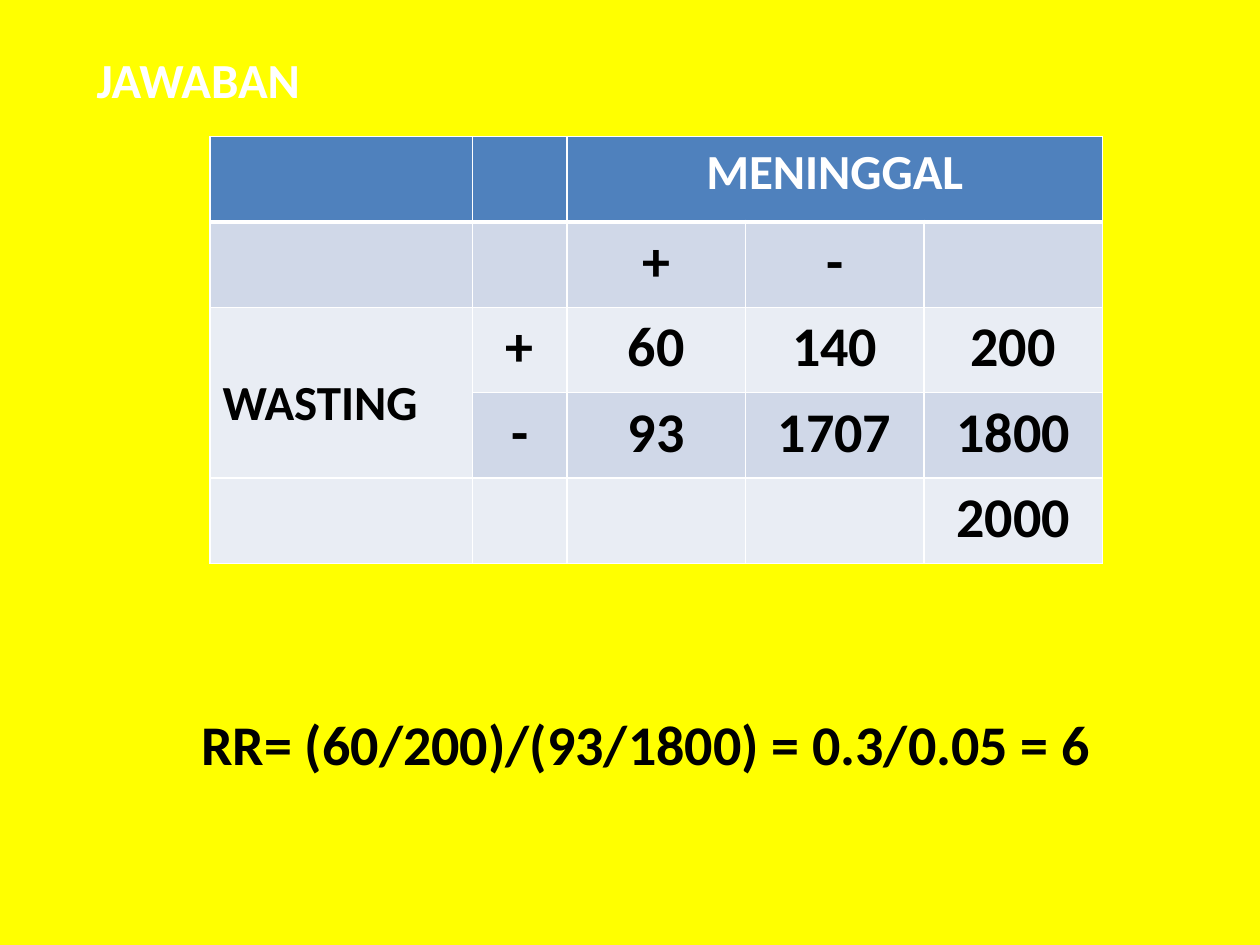
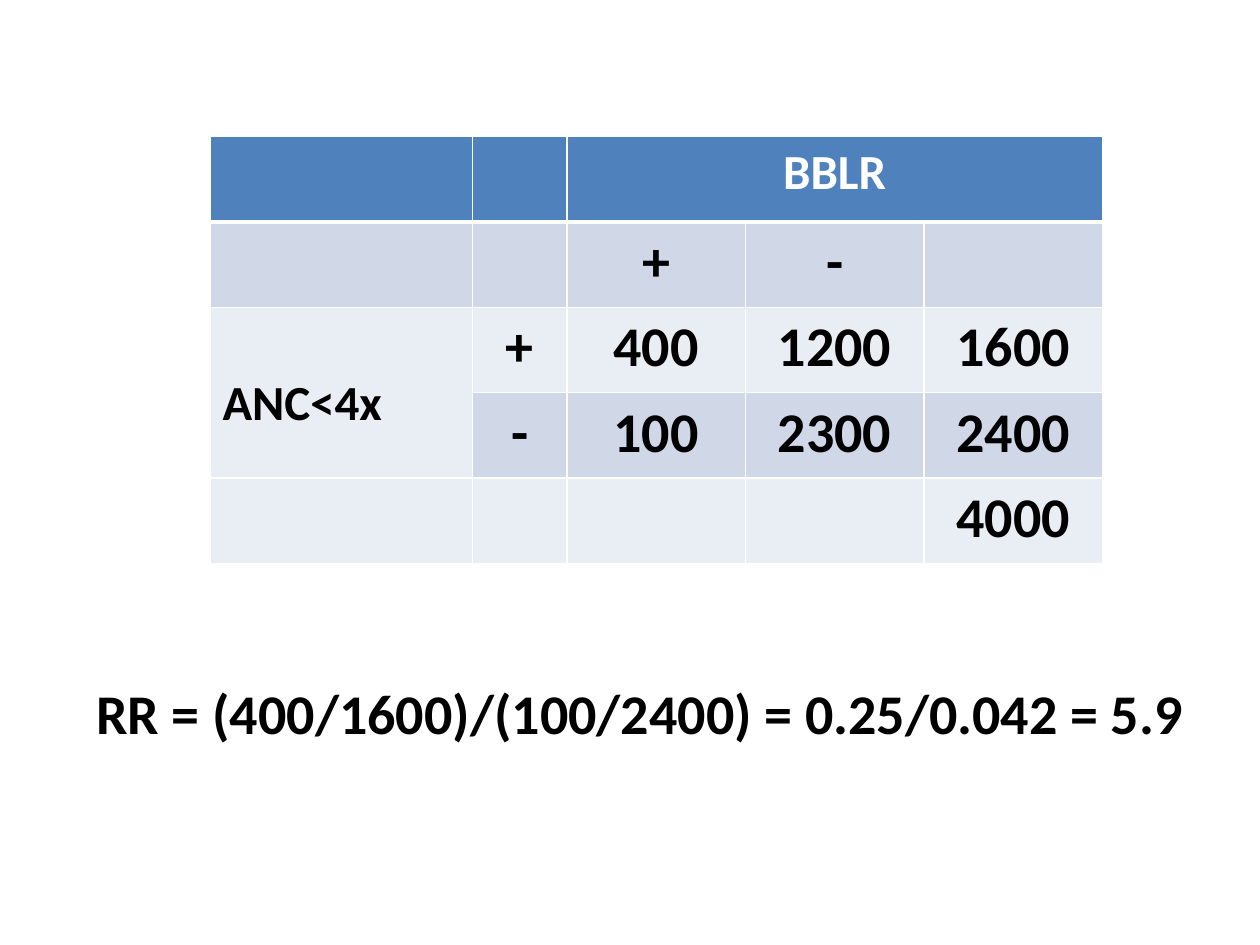
from lxml.etree import SubElement
from pptx import Presentation
from pptx.dml.color import RGBColor
from pptx.enum.text import MSO_ANCHOR, MSO_AUTO_SIZE, PP_ALIGN
from pptx.oxml.ns import qn
from pptx.util import Pt

# Shared look
FONT = "Calibri"
WHITE, BLACK, YELLOW = "FFFFFF", "000000", "FFFF00"
HEADER_FILL, BAND_FILLS = "4F81BD", ("E9EDF4", "D0D8E8")
LABEL_SIZE, VALUE_SIZE = 28, 32
TITLE_ONLY, BLANK = 5, 6

# Shared table grid
TABLE_BOX = (120, 78, 510, 244)
COLUMN_WIDTHS = (150, 54, 102, 102, 102)
ROW_COUNT = 5


def color(hex_value):
    return RGBColor.from_string(hex_value)


def write(text_frame, text, size, text_color=BLACK, alignment=PP_ALIGN.LEFT):
    paragraph = text_frame.paragraphs[0]
    paragraph.alignment = alignment
    run = paragraph.add_run()
    run.text = text
    font_format = {"name": FONT, "size": Pt(size), "bold": True}
    for attribute, value in font_format.items():
        setattr(run.font, attribute, value)
    run.font.color.rgb = color(text_color)


def format_frame(text_frame):
    frame_format = {
        "word_wrap": True,
        "auto_size": MSO_AUTO_SIZE.SHAPE_TO_FIT_TEXT,
        "vertical_anchor": MSO_ANCHOR.TOP,
    }
    for attribute, value in frame_format.items():
        setattr(text_frame, attribute, value)


def add_slide(presentation, layout_index, background):
    slide = presentation.slides.add_slide(presentation.slide_layouts[layout_index])
    slide.background.fill.solid()
    slide.background.fill.fore_color.rgb = color(background)
    return slide


def add_title(slide, text, box):
    title = slide.shapes.title
    for attribute, length in zip(("left", "top", "width", "height"), box):
        setattr(title, attribute, Pt(length))
    format_frame(title.text_frame)
    write(title.text_frame, text, LABEL_SIZE, WHITE)


def add_risk_ratio(slide, text, box):
    shape = slide.shapes.add_textbox(*map(Pt, box))
    format_frame(shape.text_frame)
    write(shape.text_frame, text, VALUE_SIZE)


def add_borders(cell, widths):
    properties = cell._tc.get_or_add_tcPr()
    for side, width in zip("LRTB", widths):
        line = SubElement(properties, qn(f"a:ln{side}"), w=str(Pt(width)))
        fill = SubElement(line, qn("a:solidFill"))
        SubElement(fill, qn("a:srgbClr"), val=WHITE)


def add_risk_table(slide, outcome, exposure, exposed, unexposed, total, box):
    """Two-by-two table; exposed and unexposed hold cases, non-cases and sum."""
    table = slide.shapes.add_table(
        ROW_COUNT, len(COLUMN_WIDTHS), *map(Pt, box)).table
    for column, width in zip(table.columns, COLUMN_WIDTHS):
        column.width = Pt(width)
    for row in table.rows:
        row.height = Pt(box[3] / ROW_COUNT)

    # Fills and borders
    for row_index, row in enumerate(table.rows):
        for cell in row.cells:
            top = 3 if row_index == 1 else 1
            bottom = 3 if row_index == 0 else 1
            add_borders(cell, (1, 1, top, bottom))
            cell.fill.solid()
            fill = BAND_FILLS[row_index % 2] if row_index else HEADER_FILL
            cell.fill.fore_color.rgb = color(fill)

    # Outcome heading and exposure label
    table.cell(0, 2).merge(table.cell(0, 4))
    write(table.cell(0, 2).text_frame, outcome, LABEL_SIZE, WHITE, PP_ALIGN.CENTER)
    table.cell(2, 0).merge(table.cell(3, 0))
    exposure_cell = table.cell(2, 0)
    exposure_cell.margin_top = Pt(37.8)
    write(exposure_cell.text_frame, exposure, LABEL_SIZE)

    # Signs, counts and total
    body = (
        ("", "+", "-", ""),
        ("+", *exposed),
        ("-", *unexposed),
        ("", "", "", total),
    )
    for row_index, values in enumerate(body, start=1):
        for column_index, value in enumerate(values, start=1):
            if value != "":
                write(table.cell(row_index, column_index).text_frame, str(value),
                      VALUE_SIZE, alignment=PP_ALIGN.CENTER)


def main():
    presentation = Presentation()
    presentation.slide_width, presentation.slide_height = Pt(720), Pt(540)

    # Wasting and death
    slide = add_slide(presentation, TITLE_ONLY, YELLOW)
    add_title(slide, "JAWABAN", (48, 24.5, 456, 41))
    add_risk_table(slide, "MENINGGAL", "WASTING",
                   (60, 140, 200), (93, 1707, 1800), 2000, TABLE_BOX)
    add_risk_ratio(slide, "RR= (60/200)/(93/1800) = 0.3/0.05 = 6",
                   (108, 402, 558, 46))

    # Antenatal care and low birth weight
    slide = add_slide(presentation, BLANK, WHITE)
    add_risk_table(slide, "BBLR", "ANC<4x",
                   (400, 1200, 1600), (100, 2300, 2400), 4000, TABLE_BOX)
    add_risk_ratio(slide, "RR = (400/1600)/(100/2400) = 0.25/0.042 = 5.9",
                   (48, 384, 654, 46))

    presentation.save("out.pptx")


if __name__ == "__main__":
    main()
